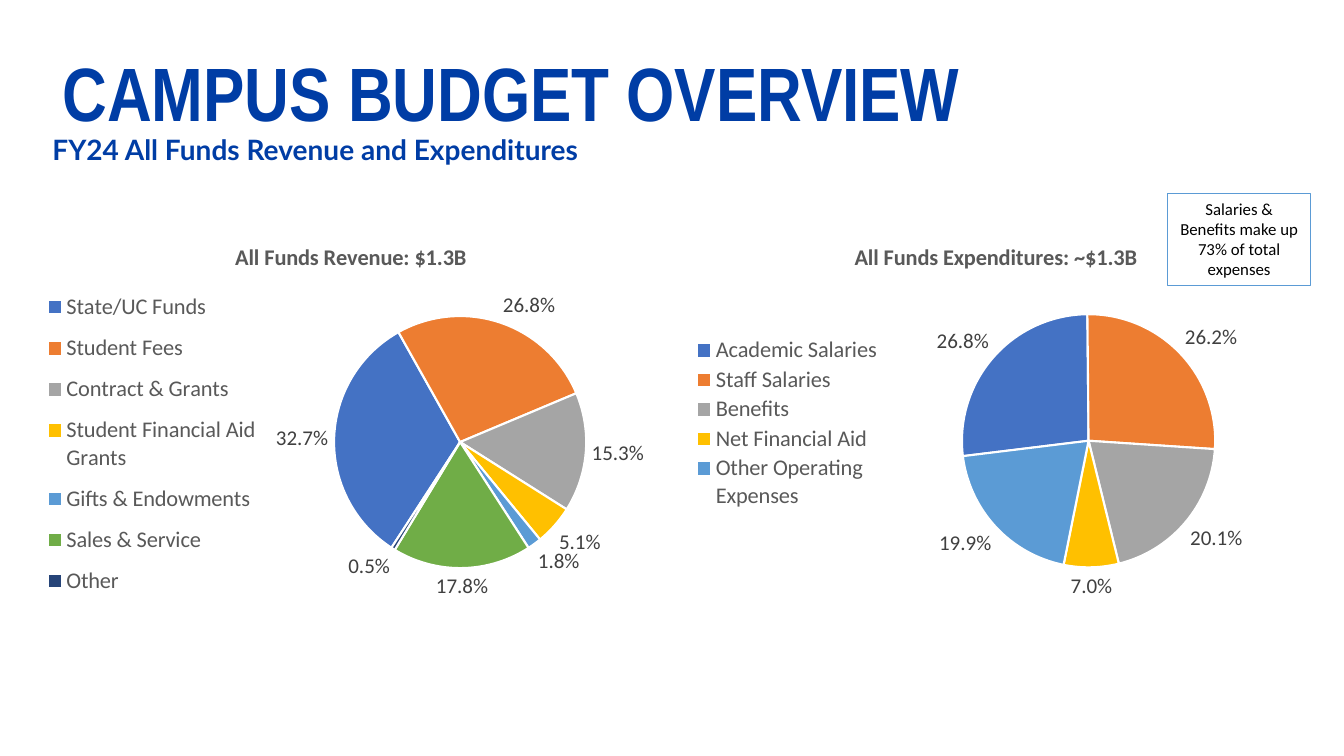
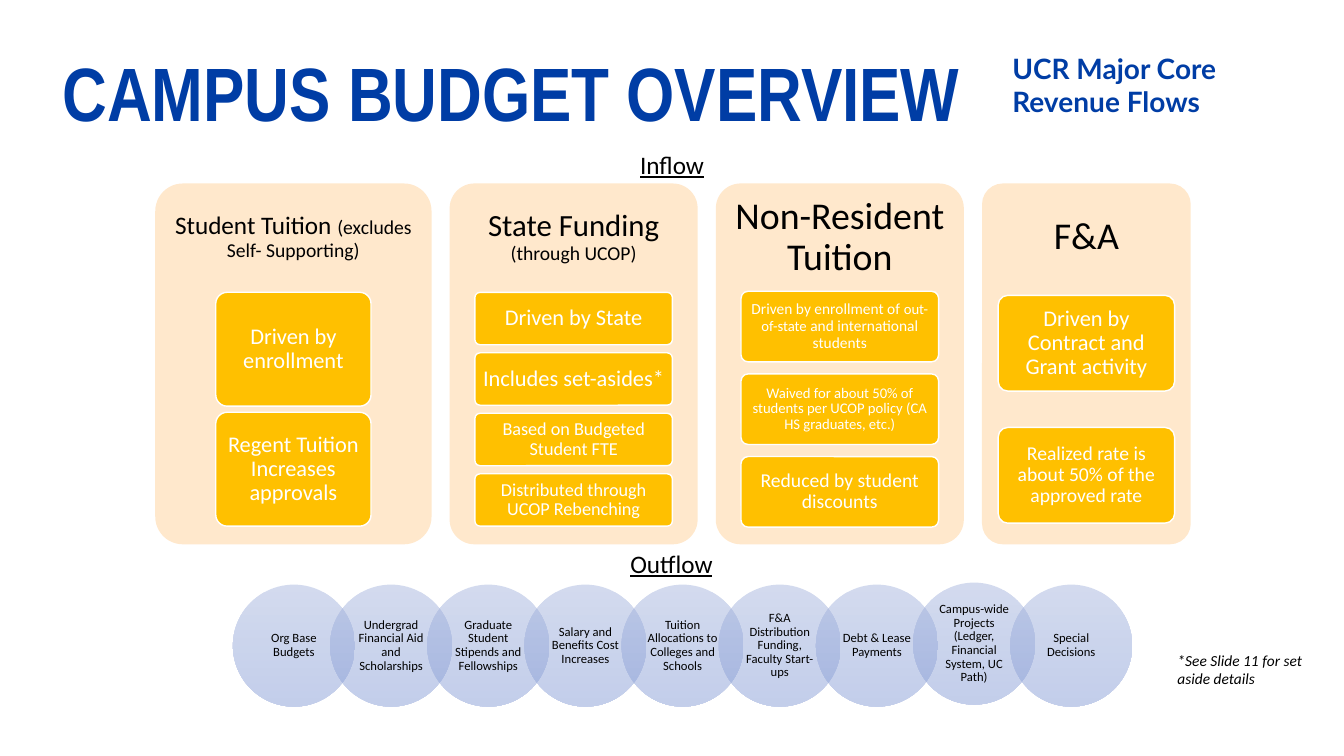
from lxml import etree
from pptx import Presentation, util as u
from pptx.chart.data import CategoryChartData
from pptx.dml.color import RGBColor
from pptx.enum import chart as charts, shapes, text
from pptx.oxml.ns import qn

PX = 9144
COLORS = {
    "blue": "003DA5", "black": "000000", "white": "FFFFFF", "gold": "FFC000",
    "peach": "FFE8CC", "outline": "5B9BD5", "legend": "595959", "label": "404040",
    "circle_top": "A8B7DF", "circle_bottom": "889ED7",
}
SLICES = ["4472C4", "ED7D31", "A5A5A5", "FFC000", "5B9BD5", "70AD47", "264478"]
BODY_FONT = "Calibri"
TITLE = "CAMPUS BUDGET OVERVIEW"

PIES = [
    {
        "title": "All Funds Revenue: $1.3B",
        "box": (34, 215, 630, 418),
        "start": 213,
        "title_at": (0.31, 0.05),
        "plot": (0.472, 0.204, 0.397, 0.662),
        "legend": (0.01, 0.15, 0.35, 0.78),
        "values": [
            ("State/UC Funds", 0.327), ("Student Fees", 0.268),
            ("Contract & Grants", 0.153), ("Student Financial Aid Grants", 0.051),
            ("Gifts & Endowments", 0.018), ("Sales & Service", 0.178), ("Other", 0.005),
        ],
    },
    {
        "title": "All Funds Expenditures: ~$1.3B",
        "box": (674, 215, 628, 418),
        "start": 263,
        "title_at": (0.27, 0.05),
        "plot": (0.446, 0.199, 0.4, 0.666),
        "legend": (0.015, 0.28, 0.31, 0.42),
        "values": [
            ("Academic Salaries", 0.268), ("Staff Salaries", 0.262), ("Benefits", 0.201),
            ("Net Financial Aid", 0.07), ("Other Operating Expenses", 0.199),
        ],
    },
]

INFLOWS = [
    {
        "heading": [("Student Tuition ", 18), ("(excludes Self- Supporting)", 14)],
        "width": 274, "inset": 7, "boxes": (290, 154, 113, 6),
        "items": [[("Driven by enrollment", 16)], [("Regent Tuition Increases approvals", 16)]],
    },
    {
        "heading": [("State Funding ", 22), ("(through UCOP)", 14)],
        "width": 246, "inset": 9, "boxes": (290, 196, 52, 8),
        "items": [
            [("Driven by State", 16)], [("Includes set-asides*", 16)],
            [("Based on Budgeted Student FTE", 13)],
            [("Distributed through UCOP Rebenching", 13)],
        ],
    },
    {
        "heading": [("Non-Resident Tuition", 27)],
        "width": 246, "inset": 11, "boxes": (289, 196, 70, 12),
        "items": [
            [("Driven by enrollment of ", 11), ("out-of-state", 10.5),
             (" and international students", 11)],
            [("Waived for about 50% of students per UCOP policy (CA HS graduates, etc.)", 10.5)],
            [("Reduced by student discounts", 14)],
        ],
    },
    {
        "heading": [("F&A", 27)],
        "width": 207, "inset": 11, "boxes": (293, 175, 95, 36),
        "items": [
            [("Driven by Contract and Grant activity", 16)],
            [("Realized rate is about 50% of the approved rate", 14)],
        ],
    },
]
PANEL_LEFT, PANEL_TOP, PANEL_HEIGHT, PANEL_GAP, HEADING_HEIGHT = 154, 182, 358, 18, 107

OUTFLOWS = [
    ("Org Base Budgets", 580),
    ("Undergrad Financial Aid and Scholarships", 580),
    ("Graduate Student Stipends and Fellowships", 580),
    ("Salary and Benefits Cost Increases", 580),
    ("Tuition Allocations to Colleges and Schools", 580),
    ("F&A Distribution Funding, Faculty Start-ups", 580),
    ("Debt & Lease Payments", 580),
    ("Campus-wide Projects (Ledger, Financial System, UC Path)", 578),
    ("Special Decisions", 580),
]
CIRCLE_FIRST, CIRCLE_LAST, CIRCLE_SIZE = 231, 1002, 121

CENTER, LEFT = text.PP_ALIGN.CENTER, text.PP_ALIGN.LEFT
MIDDLE, TOP = text.MSO_ANCHOR.MIDDLE, text.MSO_ANCHOR.TOP


def emu(*lengths):
    return [u.Emu(round(length * PX)) for length in lengths]


def rgb(name):
    return RGBColor.from_string(COLORS.get(name, name))


def style(font, size, color, name=BODY_FONT, bold=False):
    font.size, font.name, font.bold = u.Pt(size), name, bold
    font.color.rgb = rgb(color)


def write(shape, runs, color="black", name=BODY_FONT, bold=False, align=LEFT,
          anchor=TOP, insets=(10, 5), spacing=None):
    frame = shape.text_frame
    frame.word_wrap, frame.auto_size = True, text.MSO_AUTO_SIZE.NONE
    frame.vertical_anchor = anchor
    frame.margin_left = frame.margin_right = emu(insets[0])[0]
    frame.margin_top = frame.margin_bottom = emu(insets[1])[0]
    paragraph = frame.paragraphs[0]
    paragraph.alignment, paragraph.line_spacing = align, spacing
    style(paragraph.font, runs[0][1], color, name, bold)
    for words, size in runs:
        run = paragraph.add_run()
        run.text = words
        if size != runs[0][1]:
            run.font.size = u.Pt(size)
    return paragraph


def add_text(slide, box, words, size, **options):
    return write(slide.shapes.add_textbox(*emu(*box)), [(words, size)], **options)


def add_box(slide, kind, box, fill, line=None):
    shape = slide.shapes.add_shape(kind, *emu(*box))
    shape.shadow.inherit = False
    if fill:
        shape.fill.solid()
        shape.fill.fore_color.rgb = rgb(fill)
    if line:
        shape.line.color.rgb = rgb(line)
        shape.line.width = u.Pt(1)
    else:
        shape.line.fill.background()
    if kind == shapes.MSO_SHAPE.ROUNDED_RECTANGLE:
        shape.adjustments[0] = 0.1
    return shape


def add_slide(presentation, subtitle, subtitle_box):
    slide = presentation.slides.add_slide(presentation.slide_layouts[5])
    title = slide.shapes.title
    title.left, title.top, title.width, title.height = emu(52, 51, 959, 113)
    write(title, [(TITLE, 54)], "blue", "Arial Narrow", True, spacing=0.9)
    add_text(slide, subtitle_box, subtitle, 20, color="blue", name="Lato",
             bold=True, insets=(0, 0))
    return slide


def place(element, fractions, inner=False):
    for old in element.findall(qn("c:layout")):
        element.remove(old)
    layout = etree.Element(qn("c:layout"))
    manual = etree.SubElement(layout, qn("c:manualLayout"))
    settings = [("layoutTarget", "inner")] if inner else []
    settings += [("xMode", "edge"), ("yMode", "edge")]
    settings += zip("xywh", fractions)
    for tag, value in settings:
        etree.SubElement(manual, qn("c:" + tag)).set("val", str(value))
    before = element.find(qn("c:legendPos"))
    if before is None:
        before = element.find(qn("c:tx"))
    if before is None:
        element.insert(0, layout)
    else:
        before.addnext(layout)


def add_pie(slide, pie):
    data = CategoryChartData(number_format="0.0%")
    data.categories = [name for name, value in pie["values"]]
    data.add_series("Series 1", [value for name, value in pie["values"]])
    chart = slide.shapes.add_chart(charts.XL_CHART_TYPE.PIE, *emu(*pie["box"]), data).chart
    style(chart.font, 10, "black")

    chart.has_title = True
    heading = chart.chart_title.text_frame
    heading.text = pie["title"]
    style(heading.paragraphs[0].font, 16, "legend", bold=True)
    chart.chart_title.include_in_layout = False

    chart.has_legend = True
    chart.legend.position = charts.XL_LEGEND_POSITION.LEFT
    chart.legend.include_in_layout = False
    style(chart.legend.font, 16, "legend")

    plot = chart.plots[0]
    plot.vary_by_categories = True
    for index in range(len(pie["values"])):
        piece = plot.series[0].points[index].format
        piece.fill.solid()
        piece.fill.fore_color.rgb = rgb(SLICES[index])
        piece.line.color.rgb = rgb("white")
        piece.line.width = u.Pt(1.5)
    plot.has_data_labels = True
    labels = plot.data_labels
    labels.show_value, labels.show_percentage = True, False
    labels.number_format, labels.number_format_is_linked = "0.0%", False
    labels.position = charts.XL_LABEL_POSITION.OUTSIDE_END
    style(labels.font, 15, "label")

    space = chart.element
    pie_element = next(space.iter(qn("c:pieChart")))
    angle = pie_element.find(qn("c:firstSliceAng"))
    if angle is None:
        angle = etree.SubElement(pie_element, qn("c:firstSliceAng"))
    angle.set("val", str(pie["start"]))
    place(next(space.iter(qn("c:title"))), pie["title_at"])
    place(next(space.iter(qn("c:plotArea"))), pie["plot"], inner=True)
    place(next(space.iter(qn("c:legend"))), pie["legend"])


def add_inflows(slide):
    rounded = shapes.MSO_SHAPE.ROUNDED_RECTANGLE
    left = PANEL_LEFT
    for inflow in INFLOWS:
        width = inflow["width"]
        add_box(slide, rounded, (left, PANEL_TOP, width, PANEL_HEIGHT), "peach")
        heading = slide.shapes.add_textbox(*emu(left, PANEL_TOP, width, HEADING_HEIGHT))
        write(heading, inflow["heading"], align=CENTER, anchor=MIDDLE,
              insets=(inflow["inset"],) * 2, spacing=0.9)
        top, box_width, height, gap = inflow["boxes"]
        for index, runs in enumerate(inflow["items"]):
            box = (left + (width - box_width) / 2, top + index * (height + gap),
                   box_width, height)
            write(add_box(slide, rounded, box, "gold", "white"), runs, "white",
                  align=CENTER, anchor=MIDDLE, insets=(4, 3), spacing=0.9)
        left += width + PANEL_GAP


def add_outflows(slide):
    pitch = (CIRCLE_LAST - CIRCLE_FIRST) / (len(OUTFLOWS) - 1)
    for index, (words, top) in enumerate(OUTFLOWS):
        box = (CIRCLE_FIRST + index * pitch, top, CIRCLE_SIZE, CIRCLE_SIZE)
        circle = add_box(slide, shapes.MSO_SHAPE.OVAL, box, None)
        circle.fill.gradient()
        circle.fill.gradient_angle = 270
        for stop, color in zip(circle.fill.gradient_stops, ("circle_top", "circle_bottom")):
            stop.color.rgb = rgb(color)
        for color in circle.element.spPr.find(qn("a:gradFill")).iter(qn("a:srgbClr")):
            etree.SubElement(color, qn("a:alpha")).set("val", "50000")
        write(circle, [(words, 9)], align=CENTER, anchor=MIDDLE, insets=(7, 1), spacing=0.9)


def main():
    presentation = Presentation()
    presentation.slide_width, presentation.slide_height = emu(1333, 750)

    funds = add_slide(presentation, "FY24 All Funds Revenue and Expenditures",
                      (52, 131, 864, 34))
    callout = add_box(funds, shapes.MSO_SHAPE.RECTANGLE, (1158, 192, 142, 91),
                      "white", "outline")
    write(callout, [("Salaries & Benefits make up 73% of total expenses", 12)], align=CENTER)
    for pie in PIES:
        add_pie(funds, pie)

    flows = add_slide(presentation, "UCR Major Core Revenue Flows", (1004, 51, 253, 67))
    add_inflows(flows)
    add_outflows(flows)
    for words, box in (("Inflow", (587, 143, 159, 40)), ("Outflow", (421, 539, 490, 40))):
        add_text(flows, box, words, 18, align=CENTER).font.underline = True
    add_text(flows, (1158, 641, 152, 47), "*See Slide 11 for set aside details", 11).font.italic = True

    presentation.save("out.pptx")


if __name__ == "__main__":
    main()
